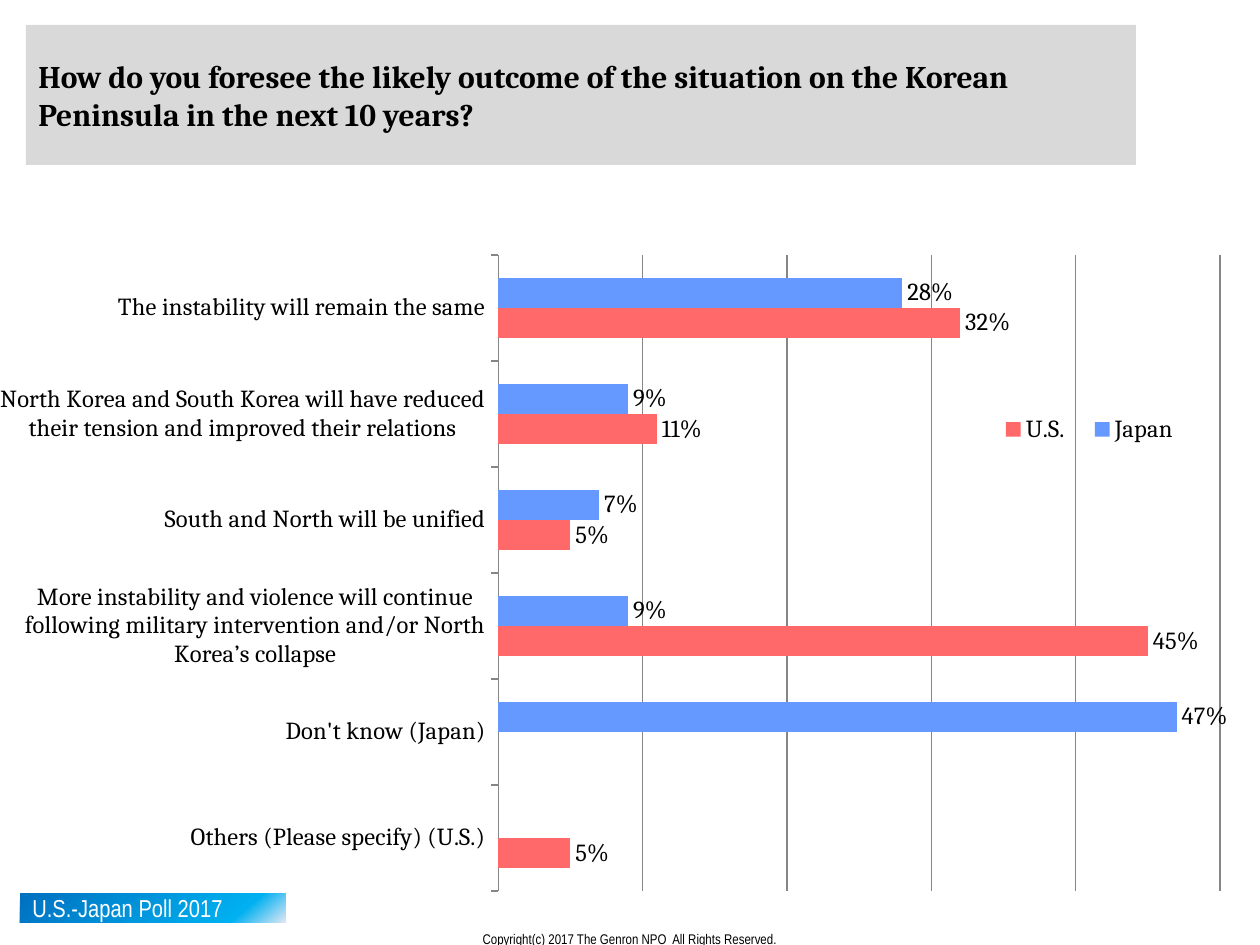
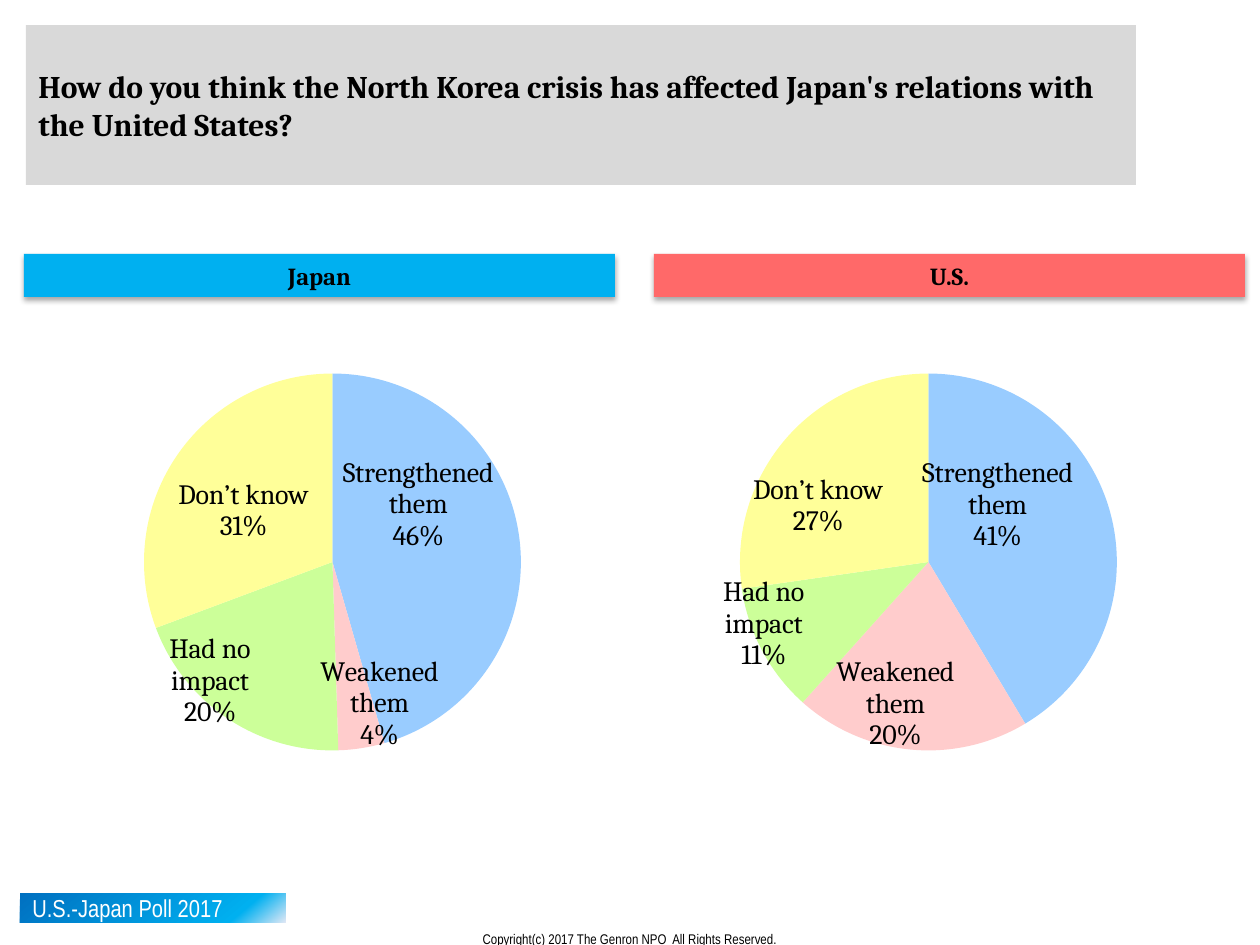
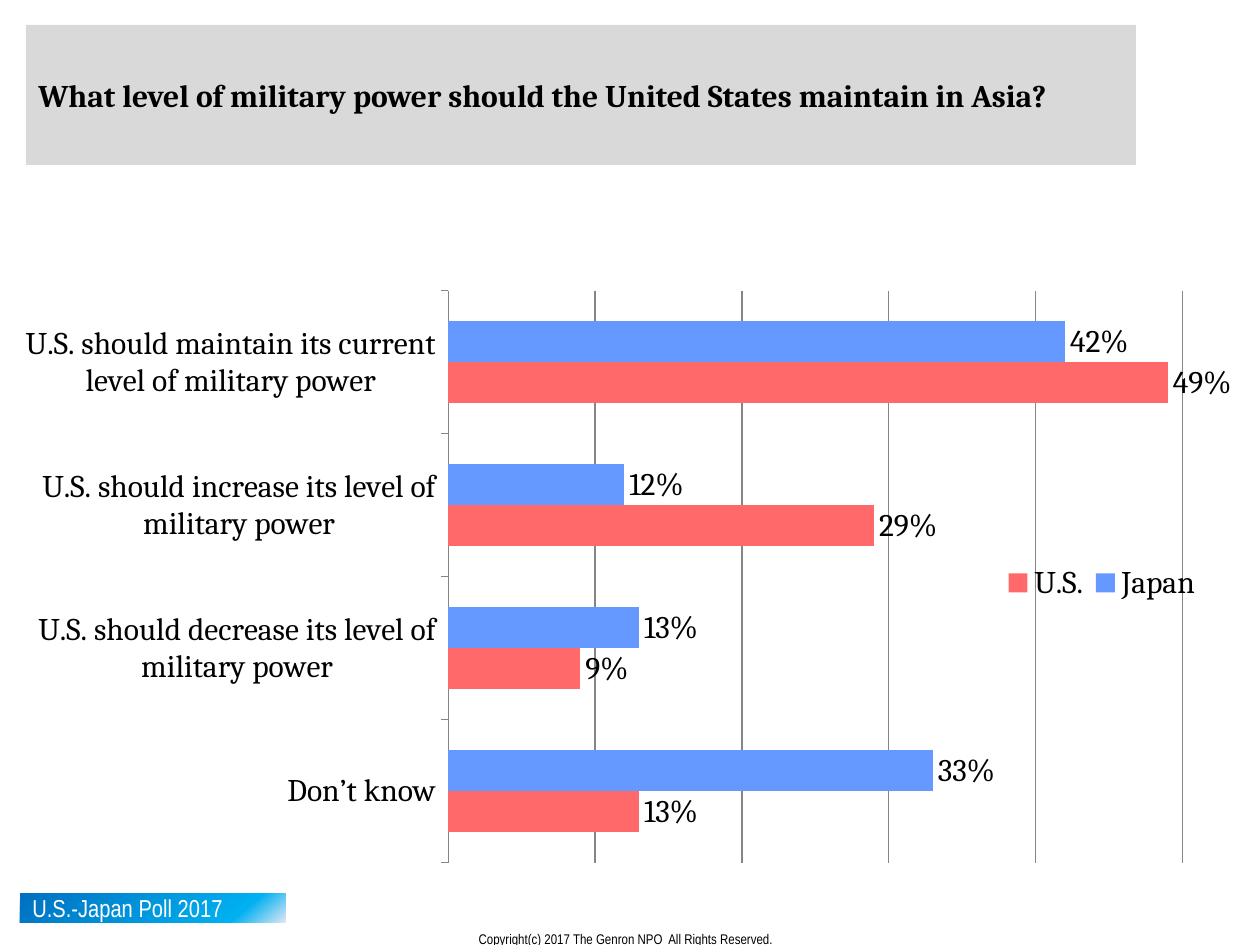
"""Build three poll slides with bar and pie charts."""
from dataclasses import dataclass
from math import cos, pi, sin

from pptx import Presentation
from pptx import util as u
from pptx.chart.data import CategoryChartData
from pptx.dml.color import RGBColor
from pptx.enum import chart as ch, shapes, text
from pptx.oxml import parse_xml
from pptx.oxml.ns import nsdecls, qn

SCALE = u.Inches(1) / 126


def px(n):
    """Turn pixels into EMU."""
    return u.Emu(round(n * SCALE))


@dataclass(frozen=True)
class Theme:
    """Colours, fonts and type sizes."""
    black: str = "000000"
    white: str = "FFFFFF"
    band: str = "D9D9D9"
    grid: str = "868686"
    japan: str = "6699FF"
    head: str = "00B0F0"
    us: str = "FF6969"
    fade: tuple = ((0, "0070C0"), (81, "00B0F0"), (100, "E1E8F5"))
    pie: tuple = ("99CCFF", "FFCCCC", "CCFF99", "FFFF99")
    serif: str = "Cambria"
    sans: str = "Arial Narrow"
    title: int = 18
    label: int = 14
    wedge: int = 16
    small: int = 8


class Deck:
    """Hold the theme and the current slide."""

    def __init__(self, theme):
        """Start an empty deck."""
        self.t = theme
        self.prs = Presentation()
        self.prs.slide_width, self.prs.slide_height = px(1260), px(945)

    def page(self, title, high=140, foot=286):
        """Add a slide with its title band, tag and footer."""
        t = self.t
        self.slide = self.prs.slides.add_slide(self.prs.slide_layouts[6])
        note = self.slide.shapes.add_textbox(*map(px, (foot, 924, 688, 30)))
        self.label(note, "Copyright(c) 2017 The Genron NPO  All Rights Reserved.",
                   t.small, t.sans, mid=True)
        band = self.rect((26, 25, 1110, high), t.band)
        self.label(band, title, t.title, t.serif, bold=True)
        tag = self.rect((20, 893, 266, 30), t.head)
        self.fade(tag)
        self.label(tag, "U.S.-Japan Poll 2017", t.label, t.sans, t.white)

    def rect(self, box, fill):
        """Add a plain filled rectangle."""
        shape = self.slide.shapes.add_shape(
            shapes.MSO_SHAPE.RECTANGLE, *map(px, box))
        shape.shadow.inherit = False
        shape.fill.solid()
        shape.fill.fore_color.rgb = RGBColor.from_string(fill)
        shape.line.fill.background()
        shape.text_frame.vertical_anchor = text.MSO_ANCHOR.MIDDLE
        return shape

    def fade(self, shape):
        """Fill a shape with the theme gradient."""
        shape.fill.gradient()
        shape.fill.gradient_angle = 310
        stops = shape._element.spPr.find(qn("a:gradFill")).find(qn("a:gsLst"))
        for old in list(stops):
            stops.remove(old)
        for pos, tone in self.t.fade:
            stops.append(parse_xml(
                f'<a:gs {nsdecls("a")} pos="{pos * 1000}">'
                f'<a:srgbClr val="{tone}"/></a:gs>'))

    def label(self, shape, words, size, face, tone=None, bold=False, mid=False):
        """Set and style one paragraph in a shape."""
        frame = shape.text_frame
        frame.word_wrap = True
        frame.text = words
        para = frame.paragraphs[0]
        para.alignment = text.PP_ALIGN.CENTER if mid else text.PP_ALIGN.LEFT
        self.font(para.runs[0].font, size, face, tone)
        para.runs[0].font.bold = bold

    def font(self, font, size, face, tone=None):
        """Set size, face and colour of a font."""
        font.size, font.name = u.Pt(size), face
        font.color.rgb = RGBColor.from_string(tone or self.t.black)

    def head(self, left, words, fill):
        """Add a heading bar with a soft shadow."""
        bar = self.rect((left, 254, 591, 43), fill)
        bar._element.spPr.find(qn("a:effectLst")).append(parse_xml(
            f'<a:outerShdw {nsdecls("a")} blurRad="{u.Pt(3.1)}" '
            f'dist="{u.Pt(1.8)}" dir="5400000" rotWithShape="0">'
            f'<a:srgbClr val="{self.t.black}"><a:alpha val="35000"/>'
            '</a:srgbClr></a:outerShdw>'))
        self.label(bar, words, self.t.label, self.t.serif, bold=True, mid=True)

    def chart(self, kind, box, cats, rows, size, plot):
        """Add a chart with its plot area placed by fractions."""
        data = CategoryChartData(number_format="0%")
        data.categories = cats
        for name, vals in rows:
            data.add_series(name, vals)
        chart = self.slide.shapes.add_chart(kind, *map(px, box), data).chart
        self.font(chart.font, size, self.t.serif)
        chart.has_title = False
        self.place(chart._chartSpace.chart.plotArea, plot, True)
        return chart

    def place(self, part, spot, inner=False):
        """Give a chart part a manual layout."""
        for old in part.findall(qn("c:layout")):
            part.remove(old)
        target = '<c:layoutTarget val="inner"/>' if inner else ""
        modes = "".join(f'<c:{k}Mode val="edge"/>' for k in "xy")
        sides = "".join(f'<c:{k} val="{v}"/>' for k, v in zip("xywh", spot))
        layout = parse_xml(
            f'<c:layout {nsdecls("c")}><c:manualLayout>{target}{modes}{sides}'
            '</c:manualLayout></c:layout>')
        part.insert(0 if inner else 1, layout)

    def bars(self, box, cats, japan, us, size, plot, key):
        """Add a bar chart that sets Japan against the U.S."""
        t = self.t
        chart = self.chart(ch.XL_CHART_TYPE.BAR_CLUSTERED, box, cats,
                           (("Japan", japan), ("U.S.", us)), size, plot)
        body = chart.plots[0]
        body.gap_width, body.vary_by_categories = 150, False
        for row, tone in zip(body.series, (t.japan, t.us)):
            row.format.fill.solid()
            row.format.fill.fore_color.rgb = RGBColor.from_string(tone)
            row.invert_if_negative = False
            tags = row.data_labels
            tags.show_value = True
            tags.number_format, tags.number_format_is_linked = "0%", False
            tags.position = ch.XL_LABEL_POSITION.OUTSIDE_END
        names, vals = chart.category_axis, chart.value_axis
        names.reverse_order = True
        names.major_tick_mark = ch.XL_TICK_MARK.OUTSIDE
        vals.visible, vals.has_major_gridlines = False, True
        vals.minimum_scale, vals.maximum_scale, vals.major_unit = 0, 0.5, 0.1
        for line in (names.format.line, vals.major_gridlines.format.line):
            line.color.rgb = RGBColor.from_string(t.grid)
            line.width = u.Pt(0.75)
        chart.has_legend = True
        chart.legend.position = ch.XL_LEGEND_POSITION.RIGHT
        chart.legend.include_in_layout = False
        self.place(chart.legend._element, key)

    def pie(self, left, cats, vals, spots):
        """Add a pie whose labels are centred on the given spots."""
        top, wide, high = 324, 833, 496
        x, y, w, h = 0.09, 0.1, 0.82, 0.76
        chart = self.chart(ch.XL_CHART_TYPE.PIE, (left, top, wide, high), cats,
                           (("Series 1", vals),), self.t.wedge, (x, y, w, h))
        chart.has_legend = False
        body = chart.plots[0]
        body.vary_by_categories = True
        row = body.series[0]
        tags = row.data_labels
        tags.show_value = tags.show_category_name = True
        tags.number_format, tags.number_format_is_linked = "0%", False
        tags.position = ch.XL_LABEL_POSITION.CENTER
        mid_x, mid_y = left + (x + w / 2) * wide, top + (y + h / 2) * high
        reach, past = h * high / 4, 0
        for i, (val, spot) in enumerate(zip(vals, spots)):
            fill = row.points[i].format.fill
            fill.solid()
            fill.fore_color.rgb = RGBColor.from_string(self.t.pie[i])
            turn = 2 * pi * (past + val / 2) / sum(vals)
            past += val
            dx = (spot[0] - mid_x - reach * sin(turn)) / wide
            dy = (spot[1] - mid_y + reach * cos(turn)) / high
            tags._element.insert(i, parse_xml(
                f'<c:dLbl {nsdecls("c")}><c:idx val="{i}"/><c:layout>'
                f'<c:manualLayout><c:x val="{dx:.3f}"/><c:y val="{dy:.3f}"/>'
                '</c:manualLayout></c:layout>'
                '<c:numFmt formatCode="0%" sourceLinked="0"/>'
                '<c:dLblPos val="ctr"/><c:showLegendKey val="0"/>'
                '<c:showVal val="1"/><c:showCatName val="1"/>'
                '<c:showSerName val="0"/><c:showPercent val="0"/>'
                '<c:showBubbleSize val="0"/><c:separator>\n</c:separator>'
                '</c:dLbl>'))


def main():
    """Build and save the deck."""
    t = Theme()
    deck = Deck(t)

    deck.page("How do you foresee the likely outcome of the situation on the "
              "Korean Peninsula in the next 10 years?")
    deck.bars((0, 214, 1245, 684),
              ("The instability will remain the same",
               "North Korea and South Korea will have reduced their tension "
               "and improved their relations",
               "South and North will be unified",
               "More instability and violence will continue following military "
               "intervention and/or North Korea’s collapse",
               "Don't know (Japan)",
               "Others (Please specify) (U.S.)"),
              (0.28, 0.09, 0.07, 0.09, 0.47, None),
              (0.32, 0.11, 0.05, 0.45, None, 0.05),
              t.label, (0.4, 0.06, 0.58, 0.93), (0.79, 0.29, 0.17, 0.05))

    deck.page("How do you think the North Korea crisis has affected Japan's "
              "relations with the United States?", high=160)
    views = ("Strengthened them", "Weakened them", "Had no impact", "Don’t know")
    deck.pie(-84, views, (0.46, 0.04, 0.2, 0.31),
             ((418, 505), (380, 704), (210, 681), (243, 511)))
    deck.pie(512, views, (0.41, 0.2, 0.11, 0.27),
             ((998, 505), (895, 704), (764, 624), (818, 506)))
    deck.head(24, "Japan", t.head)
    deck.head(654, "U.S.", t.us)

    deck.page("What level of military power should the United States maintain "
              "in Asia?", foot=282)
    deck.bars((0, 254, 1245, 615),
              ("U.S. should maintain its current level of military power",
               "U.S. should increase its level of military power",
               "U.S. should decrease its level of military power",
               "Don’t know"),
              (0.42, 0.12, 0.13, 0.33), (0.49, 0.29, 0.09, 0.13),
              t.title, (0.36, 0.06, 0.59, 0.93), (0.8, 0.5, 0.17, 0.07))

    deck.prs.save("out.pptx")


if __name__ == "__main__":
    main()
